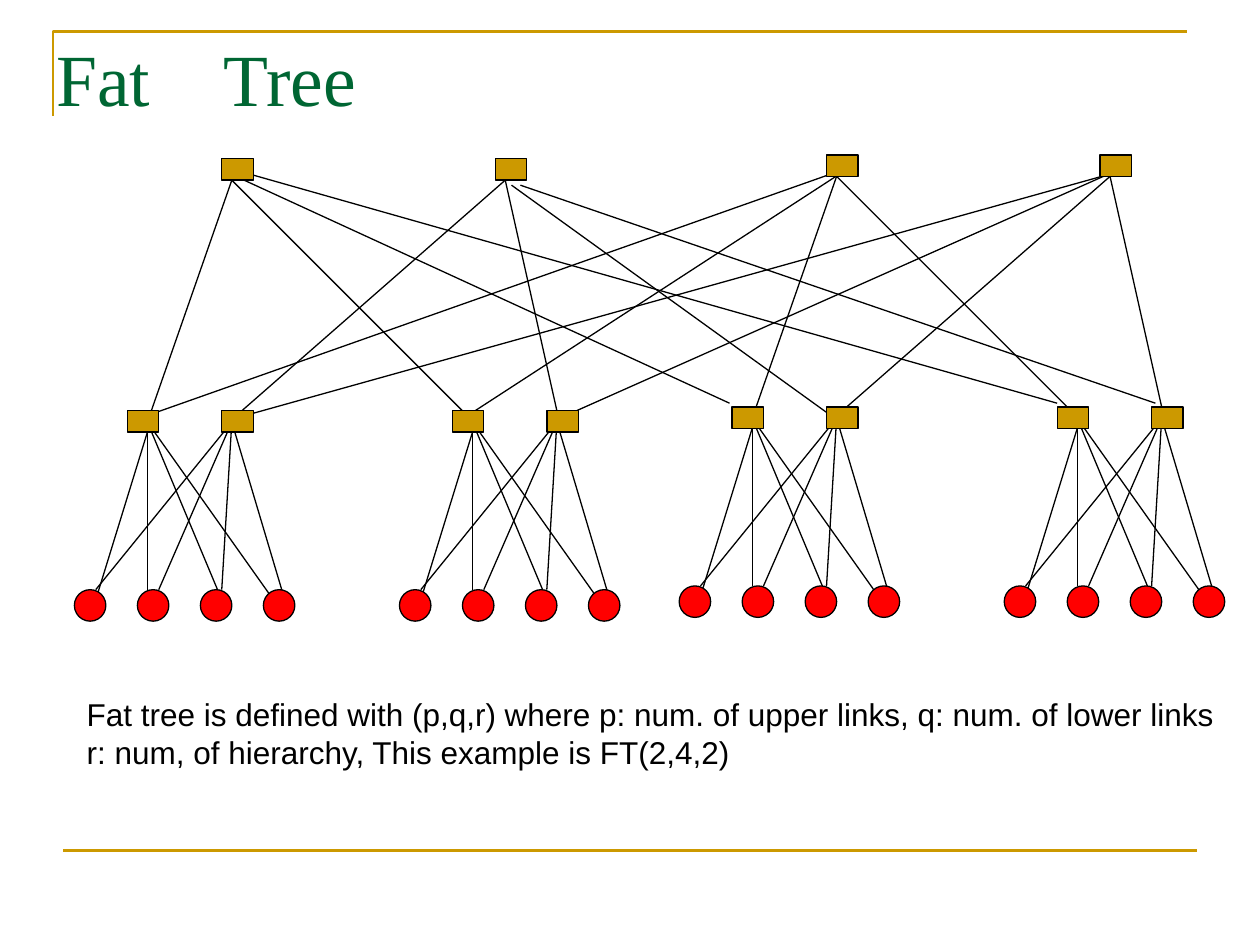
from dataclasses import dataclass

from lxml import etree
from pptx import Presentation
from pptx import util as u
from pptx.dml.color import RGBColor
from pptx.enum import shapes, text
from pptx.oxml.ns import qn
from pptx.slide import Slide

GOLD = RGBColor(0xCC, 0x99, 0x00)
GREEN = RGBColor(0x00, 0x66, 0x33)
RED = RGBColor(0xFF, 0x00, 0x00)
BLACK = RGBColor(0x00, 0x00, 0x00)

SWITCH_SIZE = (0.25, 0.17)
HOST_SIZE = (0.25, 0.25)
HALVES = [(0.59, 1.26), (5.39, 1.23)]
POD_GAP = 2.58
POD_SWITCHES = [0.42, 1.17]
ROOT_SWITCHES = [1.17, 3.34]
HOSTS = [0, 0.5, 1, 1.5]
POD_DROP, HOST_DROP = 2, 1.42

POD_LINKS = [
    (0.58, 0.17, 0.17, 1.5), (0.58, 0.09, 0.58, 1.42),
    (0.58, 0.09, 1.17, 1.5), (0.58, 0.09, 1.58, 1.5),
    (1.25, 0.09, 0.17, 1.42), (1.25, 0.09, 0.67, 1.42),
    (1.25, 0.09, 1.17, 1.42), (1.25, 0.09, 1.67, 1.5),
]
ROOT_LINKS = [
    (1.25, 0.17, 0.58, 2.09), (1.25, 0.17, 3.08, 2),
    (3.42, 0.17, 1.33, 2), (3.42, 0.17, 3.83, 2),
]
CROSS_LINKS = [
    (5.79, 3.2, 1.85, 1.39), (8.39, 3.2, 2.01, 1.39),
    (6.57, 3.28, 4.06, 1.47), (9.17, 3.2, 4.13, 1.47),
    (1.22, 3.28, 6.57, 1.39), (3.74, 3.28, 6.65, 1.39),
    (4.53, 3.28, 8.78, 1.39), (2.01, 3.28, 8.78, 1.39),
]


@dataclass
class FatTreeSlide:
    """Draws the parts of the fat tree on one slide in a shared style."""

    slide: Slide
    link_width: float = 0.75
    rule_width: float = 1.5

    def link(self, x1, y1, x2, y2, color=BLACK, width=None):
        ends = [u.Inches(v) for v in (x1, y1, x2, y2)]
        line = self.slide.shapes.add_connector(shapes.MSO_CONNECTOR.STRAIGHT, *ends)
        line.line.color.rgb = color
        line.line.width = u.Pt(width or self.link_width)
        etree.SubElement(line._element.spPr, qn("a:effectLst"))

    def links(self, x, y, offsets):
        for x1, y1, x2, y2 in offsets:
            self.link(x + x1, y + y1, x + x2, y + y2)

    def node(self, preset, x, y, size, color):
        node = self.slide.shapes.add_shape(preset, *map(u.Inches, (x, y, *size)))
        node.shadow.inherit = False
        node.fill.solid()
        node.fill.fore_color.rgb = color
        node.line.color.rgb = BLACK
        node.line.width = u.Pt(self.link_width)

    def switch(self, x, y):
        self.node(shapes.MSO_SHAPE.RECTANGLE, x, y, SWITCH_SIZE, GOLD)

    def host(self, x, y):
        self.node(shapes.MSO_SHAPE.OVAL, x, y, HOST_SIZE, RED)

    def corner(self, *points):
        start, *rest = [tuple(map(u.Inches, point)) for point in points]
        builder = self.slide.shapes.build_freeform(*start)
        builder.add_line_segments(rest, close=False)
        corner = builder.convert_to_shape()
        corner.shadow.inherit = False
        corner.fill.background()
        corner.line.color.rgb = GOLD
        corner.line.width = u.Pt(self.rule_width)

    def words(self, box, lines, font, size, color, wrap=True):
        frame = self.slide.shapes.add_textbox(*map(u.Inches, box)).text_frame
        frame.word_wrap = wrap
        if not wrap:
            frame.auto_size = text.MSO_AUTO_SIZE.SHAPE_TO_FIT_TEXT
        frame.text = "\n".join(lines)
        for paragraph in frame.paragraphs:
            paragraph.font.name = font
            paragraph.font.size = u.Pt(size)
            paragraph.font.color.rgb = color


def main():
    deck = Presentation()
    deck.slide_width, deck.slide_height = u.Inches(10), u.Inches(7.5)
    tree = FatTreeSlide(deck.slides.add_slide(deck.slide_layouts[6]))

    tree.corner((0.42, 0.92), (0.42, 0.25), (9.42, 0.25))
    tree.link(0.5, 6.75, 9.5, 6.75, GOLD, tree.rule_width)
    tree.words((0.35, 0.21, 9, 1.25), ["Fat　Tree"], "Times New Roman", 42, GREEN)
    tree.words(
        (0.59, 5.47, 9.23, 0.71),
        ["Fat tree is defined with (p,q,r) where p: num. of upper links, q: num. of lower links",
         "r: num, of hierarchy, This example is FT(2,4,2)"],
        "Arial", 18, BLACK, wrap=False)

    pods = [(left + i * POD_GAP, top + POD_DROP) for left, top in HALVES for i in range(2)]
    for left, top in HALVES:
        tree.links(left, top, ROOT_LINKS)
    for left, top in pods:
        tree.links(left, top, POD_LINKS)
    tree.links(0, 0, CROSS_LINKS)

    for left, top in HALVES:
        for offset in ROOT_SWITCHES:
            tree.switch(left + offset, top)
    for left, top in pods:
        for offset in POD_SWITCHES:
            tree.switch(left + offset, top)
        for offset in HOSTS:
            tree.host(left + offset, top + HOST_DROP)

    deck.save("out.pptx")


if __name__ == "__main__":
    main()
